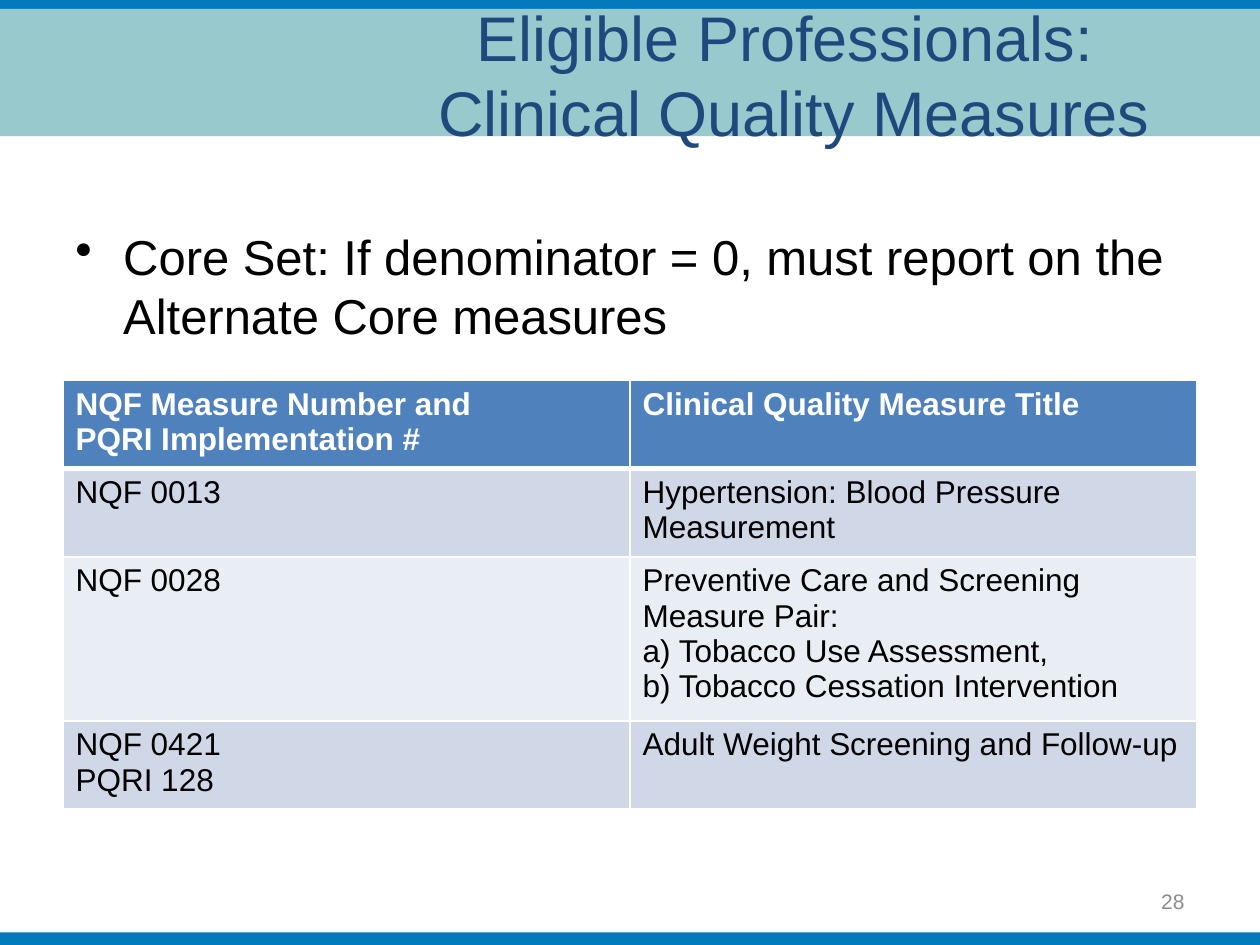
import pptx
import pptx.dml.color
import pptx.enum.shapes
import pptx.enum.text
import pptx.util
from lxml import etree
from pptx.util import Inches

ALIGN = pptx.enum.text.PP_ALIGN
ANCHOR = pptx.enum.text.MSO_ANCHOR
DRAWING_NS = "http://schemas.openxmlformats.org/drawingml/2006/main"


def rgb(color):
    return pptx.dml.color.RGBColor.from_string(color)


def style(paragraph, size, color, bold=False):
    paragraph.font.name = "Arial"
    paragraph.font.size = pptx.util.Pt(size)
    paragraph.font.color.rgb = rgb(color)
    paragraph.font.bold = bold


deck = pptx.Presentation()
deck.slide_width, deck.slide_height = Inches(10), Inches(7.5)
slide = deck.slides.add_slide(deck.slide_layouts[6])

# Header and footer bands
for top, height, color in [
    (-0.01, 0.26, "027ABB"),
    (0.07, 1.01, "98C9CD"),
    (7.4, 0.1, "027ABB"),
]:
    band = slide.shapes.add_shape(
        pptx.enum.shapes.MSO_SHAPE.RECTANGLE,
        Inches(0), Inches(top), Inches(10.01), Inches(height))
    band.shadow.inherit = False
    band.fill.solid()
    band.fill.fore_color.rgb = rgb(color)
    band.line.fill.background()

# Title, main point and page number
paragraphs = []
for left, top, width, height, anchor, align, text, size, color in [
    (2.6, 0.09, 7.4, 0.99, ANCHOR.MIDDLE, ALIGN.CENTER,
     "Eligible Professionals: \vClinical Quality Measures", 36, "1F497D"),
    (0.5, 1.75, 9, 1.16, ANCHOR.TOP, ALIGN.LEFT,
     "Core Set: If denominator = 0, must report on the Alternate Core measures",
     28, "000000"),
    (7.17, 6.95, 2.33, 0.4, ANCHOR.MIDDLE, ALIGN.RIGHT, "28", 12, "8C8C8C"),
]:
    frame = slide.shapes.add_textbox(
        Inches(left), Inches(top), Inches(width), Inches(height)).text_frame
    frame.word_wrap = True
    frame.vertical_anchor = anchor
    paragraph = frame.paragraphs[0]
    paragraph.text = text
    paragraph.alignment = align
    style(paragraph, size, color)
    paragraphs.append(paragraph)

title, core_set, page_number = paragraphs
core_set_properties = core_set._p.get_or_add_pPr()
core_set_properties.set("marL", str(Inches(0.38)))
core_set_properties.set("indent", str(Inches(-0.38)))
bullet = etree.Element(f"{{{DRAWING_NS}}}buChar", char="•")
core_set_properties.insert(0, bullet)

# Core measures
measures = [
    ("NQF Measure Number and\nPQRI Implementation #",
     "Clinical Quality Measure Title"),
    ("NQF 0013", "Hypertension: Blood Pressure Measurement"),
    ("NQF 0028",
     "Preventive Care and Screening Measure Pair:\n"
     "a) Tobacco Use Assessment,\n"
     "b) Tobacco Cessation Intervention"),
    ("NQF 0421\nPQRI 128", "Adult Weight Screening and Follow-up"),
]
row_fills = ["4F81BD", "D0D8E8", "E9EDF4", "D0D8E8"]
row_height = Inches(0.41)
table = slide.shapes.add_table(
    len(measures), 2, Inches(0.5), Inches(3.02), Inches(9),
    row_height * len(measures)).table

for row, (texts, row_fill) in enumerate(zip(measures, row_fills)):
    header = row == 0
    for column, text in enumerate(texts):
        cell = table.cell(row, column)
        cell.text = text
        for paragraph in cell.text_frame.paragraphs:
            style(paragraph, 18, "FFFFFF" if header else "000000", header)
        cell_properties = cell._tc.get_or_add_tcPr()
        for side in "LRTB":
            below_header = (row, side) in [(0, "B"), (1, "T")]
            border = etree.SubElement(
                cell_properties, f"{{{DRAWING_NS}}}ln{side}",
                w=str(pptx.util.Pt(3 if below_header else 1)))
            border_fill = etree.SubElement(border, f"{{{DRAWING_NS}}}solidFill")
            etree.SubElement(
                border_fill, f"{{{DRAWING_NS}}}srgbClr", val="FFFFFF")
        cell.fill.solid()
        cell.fill.fore_color.rgb = rgb(row_fill)

deck.save("out.pptx")
